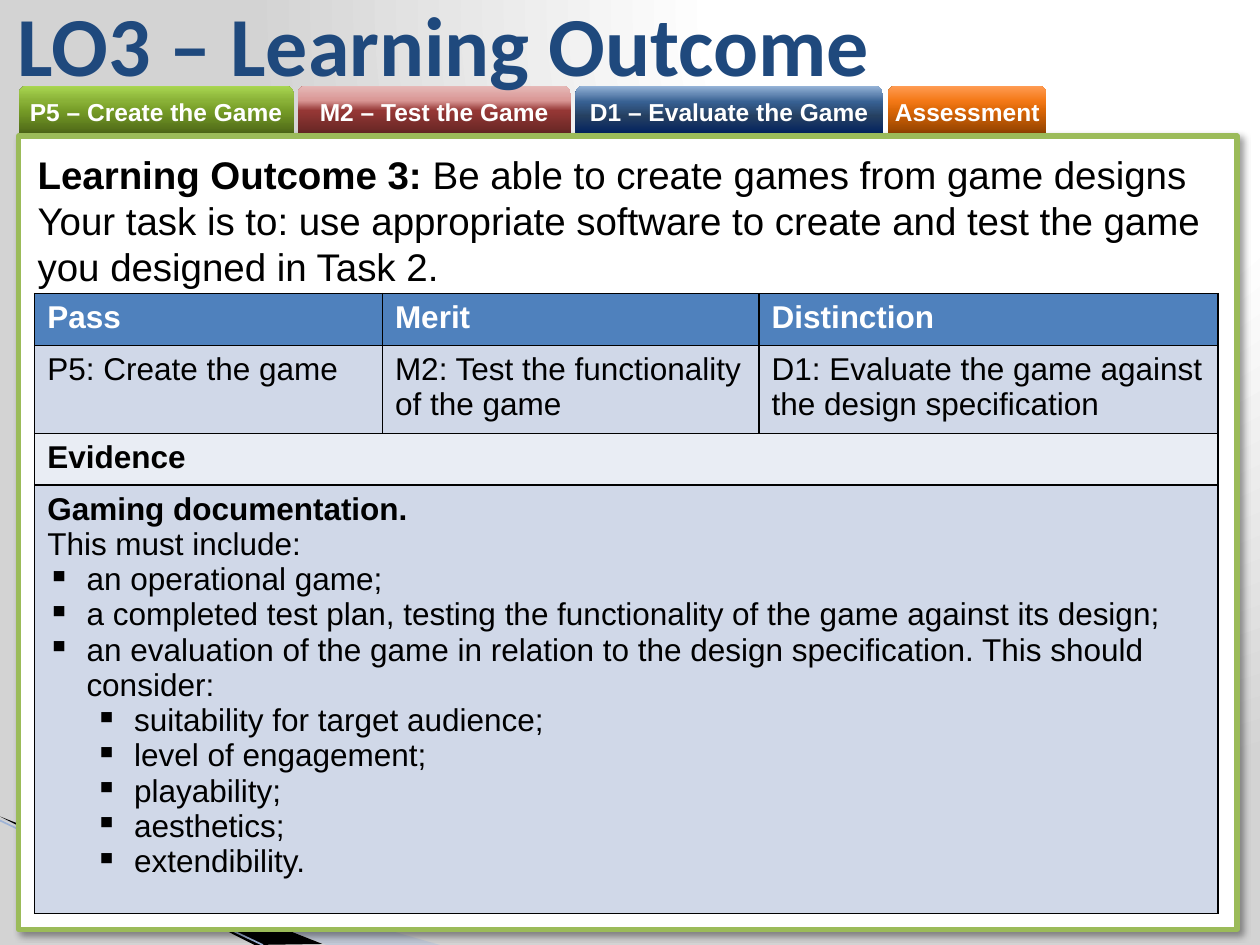
from lxml import etree
from pptx import Presentation
from pptx.dml.color import RGBColor
from pptx.enum.shapes import MSO_CONNECTOR, MSO_SHAPE
from pptx.enum.text import MSO_ANCHOR, PP_ALIGN
from pptx.oxml import parse_xml
from pptx.oxml.ns import nsdecls, qn
from pptx.util import Cm, Pt

RECTANGLE = MSO_SHAPE.RECTANGLE
TAB = MSO_SHAPE.ROUND_2_SAME_RECTANGLE
STRAIGHT = MSO_CONNECTOR.STRAIGHT
MIDDLE = MSO_ANCHOR.MIDDLE
CENTER = PP_ALIGN.CENTER

COLORS = {
    "white": "FFFFFF", "black": "000000", "title": "1F497D",
    "border": "9BBB59", "ribbon": "A7B9DB", "ribbon line": "9EB3D6",
    "header": "4F81BD", "band": "D0D8E8", "light band": "E9EDF4",
}
BACKGROUND_STOPS = [(0, "FFFFFF"), (40, "FFFFFF"), (100, "D3D3D3")]
UPWARD = '<a:lin ang="16200000" scaled="0"/>'
CIRCLE = '<a:path path="circle"><a:fillToRect l="65000" b="98000"/></a:path>'
TABS = [
    ("P5 – Create the Game", 0.38, 5.54,
     [(0, "4A6316"), (50, "769C27"), (70, "89B137"), (100, "A9D651")]),
    ("M2 – Test the Game", 6, 5.51,
     [(0, "632523"), (50, "953735"), (70, "D99694"), (100, "E6B9B8")]),
    ("D1 – Evaluate the Game", 11.6, 6.2,
     [(0, "002060"), (39, "254061"), (67, "376092"), (100, "95B3D7")]),
    ("Assessment", 17.9, 3.2,
     [(0, "8B3F00"), (50, "DA6606"), (70, "F47917"), (100, "FF9C54")]),
]
COLUMN_WIDTHS = [7.01, 7.59, 9.25]
ROW_HEIGHTS = [1.04, 1.78, 1.04, 8.64]
HEADINGS = ["Pass", "Merit", "Distinction"]
CRITERIA = [
    "P5: Create the game",
    "M2: Test the functionality of the game",
    "D1: Evaluate the game against the design specification",
]
EVIDENCE = [
    (0, "Gaming documentation."),
    (0, "This must include:"),
    (1, "an operational game;"),
    (1, "a completed test plan, testing the functionality of the game against its design;"),
    (1, "an evaluation of the game in relation to the design specification. This should consider:"),
    (2, "suitability for target audience;"),
    (2, "level of engagement;"),
    (2, "playability;"),
    (2, "aesthetics;"),
    (2, "extendibility."),
]
BULLET_INDENTS = {1: 0.79, 2: 1.75}


def rgb(name):
    """Return the named colour."""
    return RGBColor.from_string(COLORS[name])


def set_font(font, size, color, bold=False, name="Arial"):
    """Set the look of a font."""
    font.name, font.size, font.bold = name, Pt(size), bold
    font.color.rgb = rgb(color)


def set_gradient(fill, element, stops, direction):
    """Give the element a gradient fill."""
    fill.solid()
    stop_list = "".join(
        f'<a:gs pos="{position * 1000}"><a:srgbClr val="{color}"/></a:gs>'
        for position, color in stops)
    solid = element.find(".//" + qn("a:solidFill"))
    solid.getparent().replace(solid, parse_xml(
        f'<a:gradFill {nsdecls("a")} rotWithShape="1"><a:gsLst>{stop_list}</a:gsLst>'
        f'{direction}</a:gradFill>'))


def add_wedge(slide, points, color, opacity=100):
    """Draw a filled wedge of the corner ribbon."""
    corners = [(Cm(x), Cm(y)) for x, y in points]
    builder = slide.shapes.build_freeform(*corners[0])
    builder.add_line_segments(corners[1:])
    shape = builder.convert_to_shape()
    shape.shadow.inherit = False
    shape.fill.solid()
    shape.fill.fore_color.rgb = rgb(color)
    shape.line.fill.background()
    color_element = shape.element.spPr.find(".//" + qn("a:srgbClr"))
    etree.SubElement(color_element, qn("a:alpha")).set("val", str(opacity * 1000))


def add_ribbon(slide):
    """Draw the ribbon in the lower left corner."""
    add_wedge(slide, [(0, 16.5), (8.87, 19.05), (6.58, 19.05)], "ribbon", 40)
    add_wedge(slide, [(0, 16.46), (6.5, 19.03), (5.13, 19.05)], "black")
    line = slide.shapes.add_connector(STRAIGHT, Cm(0), Cm(16.54), Cm(5.3), Cm(19.05))
    line.line.color.rgb = rgb("ribbon line")
    line.line.width = Pt(0.95)
    etree.SubElement(line.element.spPr, qn("a:effectLst"))


def add_tab(slide, label, left, width, stops):
    """Add a labelled tab with a glossy fill."""
    shape = slide.shapes.add_shape(TAB, Cm(left), Cm(1.73), Cm(width), Cm(1))
    shape.shadow.inherit = False
    shape.line.fill.background()
    set_gradient(shape.fill, shape.element.spPr, stops, UPWARD)
    frame = shape.text_frame
    frame.margin_left = frame.margin_right = frame.margin_top = frame.margin_bottom = 0
    frame.vertical_anchor = MIDDLE
    paragraph = frame.paragraphs[0]
    paragraph.text = label
    paragraph.alignment = CENTER
    set_font(paragraph.font, 14, "white", True)


def add_panel(slide):
    """Add the bordered content panel with its shadow."""
    panel = slide.shapes.add_shape(RECTANGLE, Cm(0.38), Cm(2.74), Cm(24.56), Cm(16))
    panel.fill.solid()
    panel.fill.fore_color.rgb = rgb("white")
    panel.line.color.rgb = rgb("border")
    panel.line.width = Pt(3)
    panel.shadow.inherit = False
    panel.element.spPr.find(qn("a:effectLst")).append(parse_xml(
        f'<a:outerShdw {nsdecls("a")} blurRad="{Pt(4)}" dist="{Pt(3)}" dir="2700000">'
        f'<a:srgbClr val="{COLORS["black"]}"><a:alpha val="40000"/></a:srgbClr>'
        '</a:outerShdw>'))


def add_text_box(slide, left, top, width, height):
    """Add a wrapping text box and return its text frame."""
    frame = slide.shapes.add_textbox(Cm(left), Cm(top), Cm(width), Cm(height)).text_frame
    frame.word_wrap = True
    return frame


def add_title(slide):
    """Add the slide title."""
    frame = add_text_box(slide, 0.1, 0, 21.41, 1.73)
    frame.vertical_anchor = MIDDLE
    frame.text = "LO3 – Learning Outcome"
    set_font(frame.paragraphs[0].font, 48, "title", True, "Calibri")


def add_task(slide):
    """Add the learning outcome and the task."""
    frame = add_text_box(slide, 0.51, 2.92, 24.03, 3.07)
    outcome = frame.paragraphs[0]
    for text, bold in [("Learning Outcome 3: ", True),
                       ("Be able to create games from game designs", False)]:
        run = outcome.add_run()
        run.text = text
        set_font(run.font, 22, "black", bold)
    task = frame.add_paragraph()
    task.text = ("Your task is to: use appropriate software to create and test "
                 "the game you designed in Task 2.")
    set_font(task.font, 22, "black")


def style_cell(cell, fill):
    """Give a cell its borders and fill."""
    properties = cell._tc.get_or_add_tcPr()
    for side in "LRTB":
        properties.append(parse_xml(
            f'<a:ln{side} {nsdecls("a")} w="{Pt(1)}"><a:solidFill>'
            f'<a:srgbClr val="{COLORS["black"]}"/></a:solidFill></a:ln{side}>'))
    cell.fill.solid()
    cell.fill.fore_color.rgb = rgb(fill)


def fill_cell(cell, items, color="black", bold_first=False):
    """Write levelled paragraphs into a cell."""
    frame = cell.text_frame
    for index, (level, text) in enumerate(items):
        paragraph = frame.add_paragraph() if index else frame.paragraphs[0]
        paragraph.text = text
        if level:
            properties = paragraph._p.get_or_add_pPr()
            properties.set("marL", str(Cm(BULLET_INDENTS[level])))
            properties.set("indent", str(-Cm(BULLET_INDENTS[1])))
            etree.SubElement(properties, qn("a:buChar")).set("char", "▪")
        set_font(paragraph.font, 18, color, bold_first and index == 0)


def add_criteria_table(slide):
    """Add the table of grading criteria and evidence."""
    table = slide.shapes.add_table(
        len(ROW_HEIGHTS), len(COLUMN_WIDTHS), Cm(0.7), Cm(5.92),
        Cm(sum(COLUMN_WIDTHS)), Cm(sum(ROW_HEIGHTS))).table
    for column, width in zip(table.columns, COLUMN_WIDTHS):
        column.width = Cm(width)
    for row, height in zip(table.rows, ROW_HEIGHTS):
        row.height = Cm(height)
    for row in (2, 3):
        table.cell(row, 0).merge(table.cell(row, 2))
    for row, fill in enumerate(["header", "band", "light band", "band"]):
        for cell in table.rows[row].cells:
            if not cell.is_spanned:
                style_cell(cell, fill)
    for column, (heading, criterion) in enumerate(zip(HEADINGS, CRITERIA)):
        fill_cell(table.cell(0, column), [(0, heading)], "white", True)
        fill_cell(table.cell(1, column), [(0, criterion)])
    fill_cell(table.cell(2, 0), [(0, "Evidence")], bold_first=True)
    fill_cell(table.cell(3, 0), EVIDENCE, bold_first=True)


def main():
    """Build and save the slide."""
    presentation = Presentation()
    presentation.slide_width, presentation.slide_height = Cm(25.4), Cm(19.05)
    slide = presentation.slides.add_slide(presentation.slide_layouts[6])
    set_gradient(slide.background.fill, slide.element, BACKGROUND_STOPS, CIRCLE)
    add_ribbon(slide)
    for tab in TABS:
        add_tab(slide, *tab)
    add_panel(slide)
    add_title(slide)
    add_task(slide)
    add_criteria_table(slide)
    presentation.save("out.pptx")


if __name__ == "__main__":
    main()
